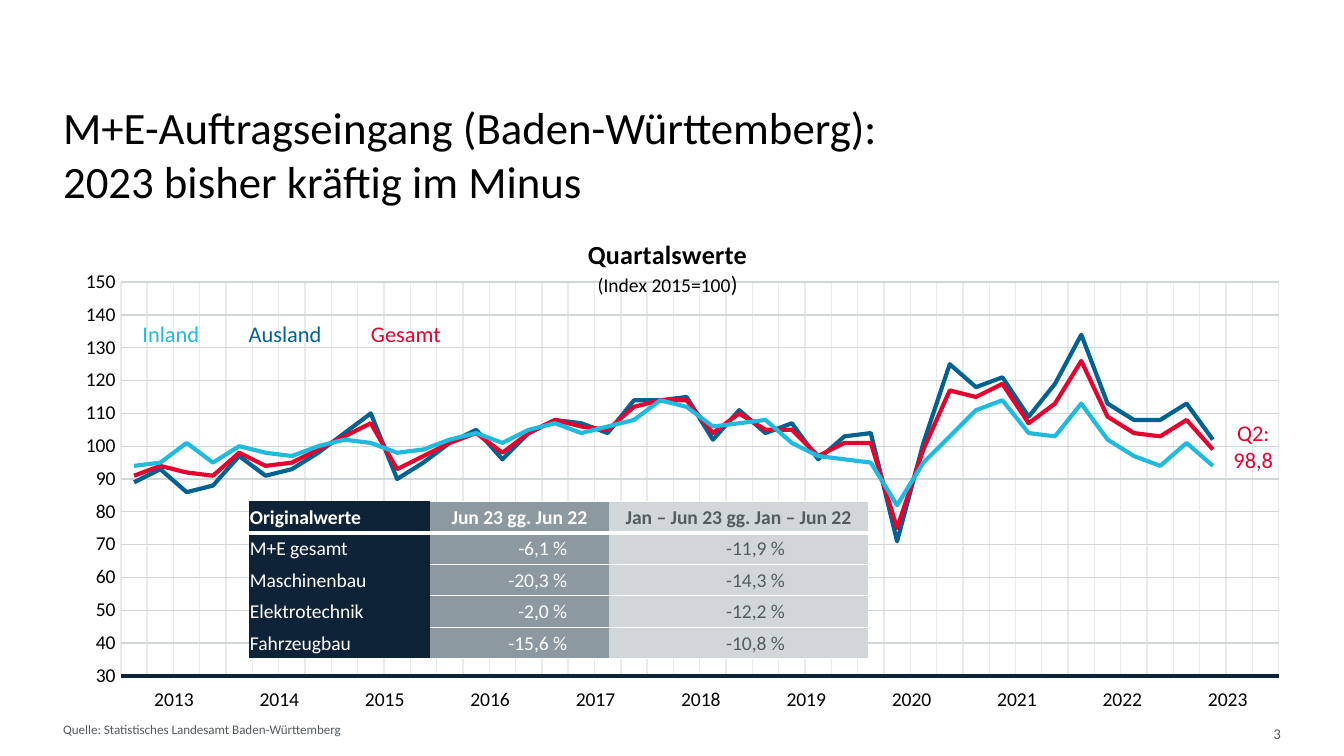
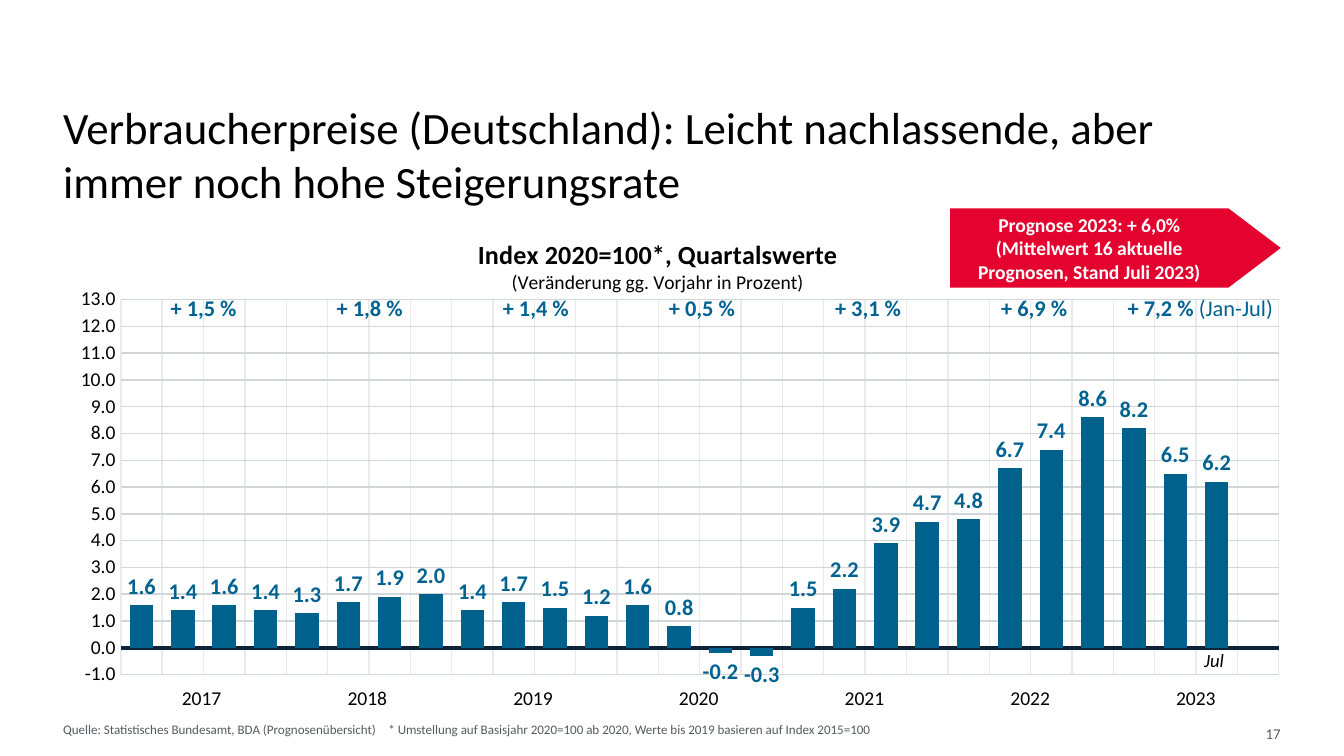
from dataclasses import dataclass
from typing import NamedTuple

from lxml import etree
from pptx import Presentation
from pptx.chart.data import CategoryChartData
from pptx.dml.color import RGBColor
from pptx.enum.chart import XL_CHART_TYPE, XL_LABEL_POSITION, XL_TICK_LABEL_POSITION, XL_TICK_MARK
from pptx.enum.shapes import MSO_SHAPE
from pptx.enum.text import MSO_ANCHOR, PP_ALIGN
from pptx.oxml.ns import qn
from pptx.util import Inches, Pt

FONT = "Calibri"
BLACK, WHITE, NAVY, GREY = "000000", "FFFFFF", "0F2338", "545C60"
STEEL, SILVER, MIST = "8D99A0", "D1D6D9", "E8EBEC"
BLUE, BAR_BLUE, RED, CYAN = "006291", "00628C", "E4032E", "20BADF"
NO_TABLE_STYLE = "{2D5ABB26-0587-4C30-8999-92F81FD0307C}"


class Box(NamedTuple):
    left: float
    top: float
    width: float
    height: float

    def lengths(self) -> list:
        return [Inches(length) for length in self]


class Run(NamedTuple):
    text: str
    size: float = 10.5
    color: str = BLACK
    bold: bool = False
    italic: bool = False


class Series(NamedTuple):
    name: str
    color: str
    values: tuple


class Column(NamedTuple):
    width: float
    fill: str
    color: str
    align: PP_ALIGN
    right_margin: float
    cells: tuple


@dataclass(frozen=True)
class QuarterChart:
    kind: XL_CHART_TYPE
    series: tuple
    minimum: float
    maximum: float
    step: float
    number_format: str
    title: tuple
    title_left: float
    plot: Box


CHART_BOX = Box(0.47, 1.73, 9.06, 3.64)

ORDERS = QuarterChart(
    kind=XL_CHART_TYPE.LINE,
    series=(
        Series("Ausland", BLUE, (
            89, 93, 86, 88, 97, 91, 93, 98, 104, 110, 90, 95, 101, 105, 96, 104, 108, 107, 104, 114, 114, 115,
            102, 111, 104, 107, 96, 103, 104, 71, 101, 125, 118, 121, 109, 119, 134, 113, 108, 108, 113, 102,
            None, None)),
        Series("Gesamt", RED, (
            91, 94, 92, 91, 98, 94, 95, 99, 103, 107, 93, 97, 101, 104, 98, 104, 108, 106, 105, 112, 114, 114,
            104, 110, 105, 105, 97, 101, 101, 75, 99, 117, 115, 119, 107, 113, 126, 109, 104, 103, 108, 99,
            None, None)),
        Series("Inland", CYAN, (
            94, 95, 101, 95, 100, 98, 97, 100, 102, 101, 98, 99, 102, 104, 101, 105, 107, 104, 106, 108, 114, 112,
            106, 107, 108, 101, 97, 96, 95, 82, 95, 103, 111, 114, 104, 103, 113, 102, 97, 94, 101, 94,
            None, None)),
    ),
    minimum=30, maximum=150, step=10, number_format="0",
    title=((Run("Quartalswerte", 14, bold=True),), (Run("(Index 2015=100"), Run(")", 12))),
    title_left=4.35, plot=Box(0.9, 2.1, 8.63, 2.93),
)

PRICES = QuarterChart(
    kind=XL_CHART_TYPE.COLUMN_CLUSTERED,
    series=(
        Series("Verbraucherpreise", BAR_BLUE, (
            1.6, 1.4, 1.6, 1.4, 1.3, 1.7, 1.9, 2, 1.4, 1.7, 1.5, 1.2, 1.6, 0.8, -0.2, -0.3, 1.5, 2.2, 3.9, 4.7,
            4.8, 6.7, 7.4, 8.6, 8.2, 6.5, 6.2, None)),
    ),
    minimum=-1, maximum=13, step=1, number_format="#,##0.0",
    title=((Run("Index 2020=100*, Quartalswerte", 14, bold=True),),
           (Run("(Veränderung gg. Vorjahr in Prozent)"),)),
    title_left=3.53, plot=Box(0.9, 2.23, 8.63, 2.79),
)

ORDER_TABLE = (
    Column(1.35, NAVY, WHITE, PP_ALIGN.LEFT, 0.01,
           ("Originalwerte", "M+E gesamt", "Maschinenbau", "Elektrotechnik", "Fahrzeugbau")),
    Column(1.33, STEEL, WHITE, PP_ALIGN.RIGHT, 0.31,
           ("Jun 23 gg. Jun 22", "-6,1 %", "-20,3 %", "-2,0 %", "-15,6 %")),
    Column(1.93, SILVER, GREY, PP_ALIGN.RIGHT, 0.62,
           ("Jan – Jun 23 gg. Jan – Jun 22", "-11,9 %", "-14,3 %", "-12,2 %", "-10,8 %")),
)


def rgb(color: str) -> RGBColor:
    return RGBColor.from_string(color)


def write(frame, paragraphs: tuple, align: PP_ALIGN = PP_ALIGN.LEFT) -> None:
    """Write paragraphs of runs; a newline inside a run becomes a line break."""
    for number, runs in enumerate(paragraphs):
        paragraph = frame.add_paragraph() if number else frame.paragraphs[0]
        paragraph.alignment = align
        for part in runs:
            for row, line in enumerate(part.text.split("\n")):
                if row:
                    paragraph.add_line_break()
                run = paragraph.add_run()
                run.text = line
                font = run.font
                font.name, font.size = FONT, Pt(part.size)
                font.bold, font.italic = part.bold, part.italic
                font.color.rgb = rgb(part.color)


def add_text(shapes, box: Box, *paragraphs: tuple, align: PP_ALIGN = PP_ALIGN.LEFT,
             anchor: MSO_ANCHOR = MSO_ANCHOR.MIDDLE):
    frame = shapes.add_textbox(*box.lengths()).text_frame
    frame.word_wrap = True
    frame.vertical_anchor = anchor
    frame.margin_left = frame.margin_top = frame.margin_right = frame.margin_bottom = 0
    write(frame, paragraphs, align)
    return frame


def add_label_row(shapes, first: Box, step: float, labels: list) -> None:
    """Centre each label, a tuple of runs, in boxes a fixed step apart."""
    for number, runs in enumerate(labels):
        add_text(shapes, first._replace(left=first.left + number * step), runs, align=PP_ALIGN.CENTER)


def add_base_slide(deck, title: str, source: str, page: int):
    slide = deck.slides.add_slide(deck.slide_layouts[6])
    add_text(slide.shapes, Box(0.47, 0.74, 9.06, 0.79), (Run(title, 24),), anchor=MSO_ANCHOR.TOP)
    footer = add_text(slide.shapes, Box(0.47, 5.37, 8.4, 0.27), anchor=MSO_ANCHOR.TOP)
    properties = footer.paragraphs[0]._p.get_or_add_pPr()
    tabs = etree.SubElement(properties, qn("a:tabLst"))
    etree.SubElement(tabs, qn("a:tab"), pos=str(Inches(2.42)), algn="l")
    write(footer, ((Run(source, 7, GREY),),))
    add_text(slide.shapes, Box(8.98, 5.39, 0.55, 0.24), (Run(str(page), 8, GREY),),
             align=PP_ALIGN.RIGHT, anchor=MSO_ANCHOR.TOP)
    return slide


def set_layout(parent, index: int, settings: dict) -> None:
    """Give a chart part a fixed place, in fractions of the chart."""
    for old in parent.findall(qn("c:layout")):
        parent.remove(old)
    layout = etree.Element(qn("c:layout"))
    manual = etree.SubElement(layout, qn("c:manualLayout"))
    for name, value in settings.items():
        etree.SubElement(manual, qn(f"c:{name}"), val=str(value))
    parent.insert(index, layout)


def style_axis(axis, grid_color: str) -> None:
    axis.major_tick_mark = axis.minor_tick_mark = XL_TICK_MARK.NONE
    axis.has_major_gridlines = True
    grid = axis.major_gridlines.format.line
    grid.color.rgb, grid.width = rgb(grid_color), Pt(0.75)


def add_quarter_chart(slide, content: QuarterChart):
    data = CategoryChartData()
    data.categories = [str(n + 1) for n in range(len(content.series[0].values))]
    for series in content.series:
        data.add_series(series.name, series.values)
    chart = slide.shapes.add_chart(content.kind, *CHART_BOX.lengths(), data).chart
    chart.has_legend = False
    chart.font.name, chart.font.size = FONT, Pt(18)
    chart.font.color.rgb = rgb(BLACK)

    chart.has_title = True
    write(chart.chart_title.text_frame, content.title, PP_ALIGN.CENTER)
    title = chart.chart_title._element
    title.find(qn("c:overlay")).set("val", "1")
    edges = {"xMode": "edge", "yMode": "edge"}
    frame, plot = CHART_BOX, content.plot
    set_layout(title, 1, edges | {"x": (content.title_left - frame.left) / frame.width, "y": 0})
    set_layout(chart._chartSpace.chart.plotArea, 0, {"layoutTarget": "inner"} | edges | {
        "x": (plot.left - frame.left) / frame.width, "y": (plot.top - frame.top) / frame.height,
        "w": plot.width / frame.width, "h": plot.height / frame.height})

    quarters, scale = chart.category_axis, chart.value_axis
    style_axis(quarters, MIST)
    quarters.tick_label_position = XL_TICK_LABEL_POSITION.NONE
    quarters.format.line.color.rgb, quarters.format.line.width = rgb(NAVY), Pt(2.25)
    style_axis(scale, SILVER)
    scale.format.line.fill.background()
    scale.minimum_scale, scale.maximum_scale = content.minimum, content.maximum
    scale.major_unit = content.step
    scale.tick_labels.font.size = Pt(10.5)
    scale.tick_labels.number_format = content.number_format
    scale.tick_labels.number_format_is_linked = False
    chart.plots[0].vary_by_categories = False
    return chart


def set_borders(cell, **widths: float) -> None:
    """Draw white borders on the named sides; zero width hides a border."""
    properties = cell._tc.get_or_add_tcPr()
    for index, (side, width) in enumerate(widths.items()):
        line = etree.Element(qn(f"a:ln{side}"), w=str(Pt(width)))
        if width:
            fill = etree.SubElement(line, qn("a:solidFill"))
            etree.SubElement(fill, qn("a:srgbClr"), val=WHITE)
        else:
            etree.SubElement(line, qn("a:noFill"))
        properties.insert(index, line)


def add_order_table(slide) -> None:
    table = slide.shapes.add_table(5, 3, *Box(1.85, 3.73, 4.61, 1.17).lengths()).table
    table.first_row = table.horz_banding = False
    table._tbl.tblPr.find(qn("a:tableStyleId")).text = NO_TABLE_STYLE
    for x, column in enumerate(ORDER_TABLE):
        table.columns[x].width = Inches(column.width)
        thin = 0.5 if x else 0
        for y, text in enumerate(column.cells):
            cell, header = table.cell(y, x), y == 0
            cell.fill.solid()
            cell.fill.fore_color.rgb = rgb(column.fill)
            cell.vertical_anchor = MSO_ANCHOR.MIDDLE
            cell.margin_left = cell.margin_top = Inches(0.01)
            cell.margin_right = Inches(0.01 if header else column.right_margin)
            cell.margin_bottom = 0
            align = PP_ALIGN.CENTER if header and x else column.align
            write(cell.text_frame, ((Run(text, color=column.color, bold=header),),), align)
            set_borders(cell, T=2.25 if y == 1 else thin, B=2.25 if header else thin)


def add_orders_slide(deck) -> None:
    slide = add_base_slide(
        deck, "M+E-Auftragseingang (Baden-Württemberg): \n2023 bisher kräftig im Minus",
        "Quelle: Statistisches Landesamt Baden-Württemberg", 3)
    chart = add_quarter_chart(slide, ORDERS)
    for line, series in zip(chart.plots[0].series, ORDERS.series):
        line.smooth = False
        line.format.line.color.rgb, line.format.line.width = rgb(series.color), Pt(2.25)
    add_order_table(slide)
    years = slide.shapes.add_group_shape().shapes
    add_label_row(years, Box(0.91, 5.03, 0.77, 0.34), 0.784, [(Run(str(y)),) for y in range(2013, 2024)])
    for left, name, color in ((1.06, "Inland", CYAN), (1.85, "Ausland", BLUE), (2.76, "Gesamt", RED)):
        add_text(slide.shapes, Box(left, 2.38, 0.85, 0.2), (Run(name, 12, color),))
    add_text(slide.shapes, Box(8.94, 2.96, 0.77, 0.72), (Run("Q2:", 12, RED),), (Run("98,8", 12, RED),),
             align=PP_ALIGN.CENTER)


def add_forecast_arrow(slide) -> None:
    arrow = slide.shapes.add_shape(MSO_SHAPE.RIGHT_ARROW, *Box(7.07, 1.55, 2.46, 0.59).lengths())
    arrow.adjustments[0], arrow.adjustments[1] = 1, 0.66
    arrow.shadow.inherit = False
    arrow.fill.solid()
    arrow.fill.fore_color.rgb = rgb(RED)
    arrow.line.fill.background()
    arrow.text_frame.word_wrap = True
    arrow.text_frame.vertical_anchor = MSO_ANCHOR.MIDDLE
    forecast = "Prognose 2023: + 6,0% (Mittelwert 16 aktuelle Prognosen, Stand Juli 2023)"
    write(arrow.text_frame, ((Run(forecast, color=WHITE, bold=True),),), PP_ALIGN.CENTER)


def add_prices_slide(deck) -> None:
    slide = add_base_slide(
        deck, "Verbraucherpreise (Deutschland): Leicht nachlassende, aber immer noch hohe Steigerungsrate",
        "Quelle: Statistisches Bundesamt, BDA (Prognosenübersicht)\t* Umstellung auf Basisjahr 2020=100 ab 2020, "
        "Werte bis 2019 basieren auf Index 2015=100", 17)
    plot = add_quarter_chart(slide, PRICES).plots[0]
    plot.gap_width = 77
    bars = plot.series[0]
    bars.invert_if_negative = False
    bars.format.fill.solid()
    bars.format.fill.fore_color.rgb = rgb(BAR_BLUE)
    plot.has_data_labels = True
    labels = plot.data_labels
    labels.show_value = True
    labels.position = XL_LABEL_POSITION.OUTSIDE_END
    labels.number_format, labels.number_format_is_linked = PRICES.number_format, False
    labels.font.name, labels.font.size, labels.font.bold = FONT, Pt(12), True
    labels.font.color.rgb = rgb(BLUE)

    rates = [(Run(f"+ {rate} %", 12, BLUE, bold=True),) for rate in ("1,5", "1,8", "1,4", "0,5", "3,1", "6,9")]
    rates.append((Run("+ 7,2 % ", 12, BLUE, bold=True), Run("(Jan-Jul)", 12, BLUE)))
    add_label_row(slide.shapes, Box(0.89, 2.12, 1.25, 0.34), 1.236, rates)
    add_label_row(slide.shapes, Box(0.91, 5.02, 1.18, 0.34), 1.233, [(Run(str(y)),) for y in range(2017, 2024)])
    add_text(slide.shapes, Box(8.96, 4.83, 0.37, 0.17), (Run("Jul", 10, italic=True),))
    add_forecast_arrow(slide)


def main() -> None:
    deck = Presentation()
    deck.slide_width = Inches(10)
    deck.slide_height = deck.slide_width * 9 // 16
    add_orders_slide(deck)
    add_prices_slide(deck)
    deck.save("out.pptx")


if __name__ == "__main__":
    main()
